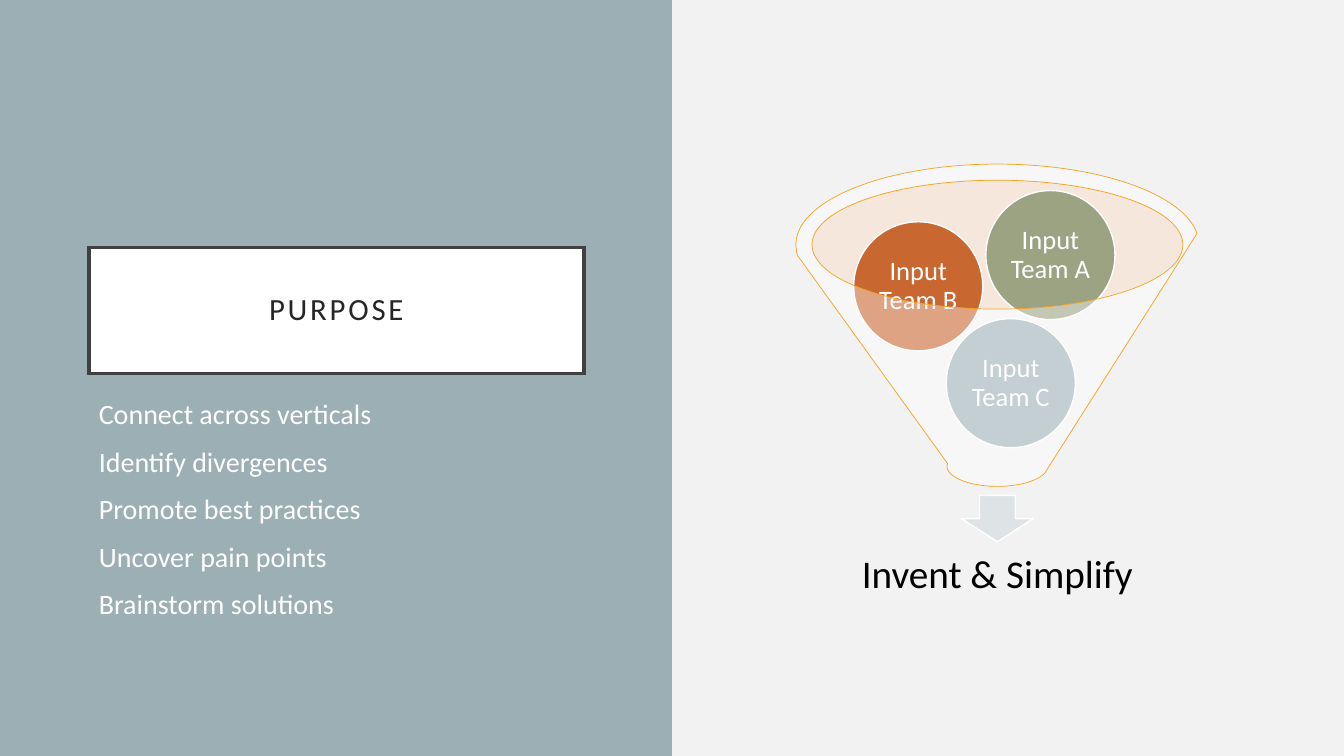
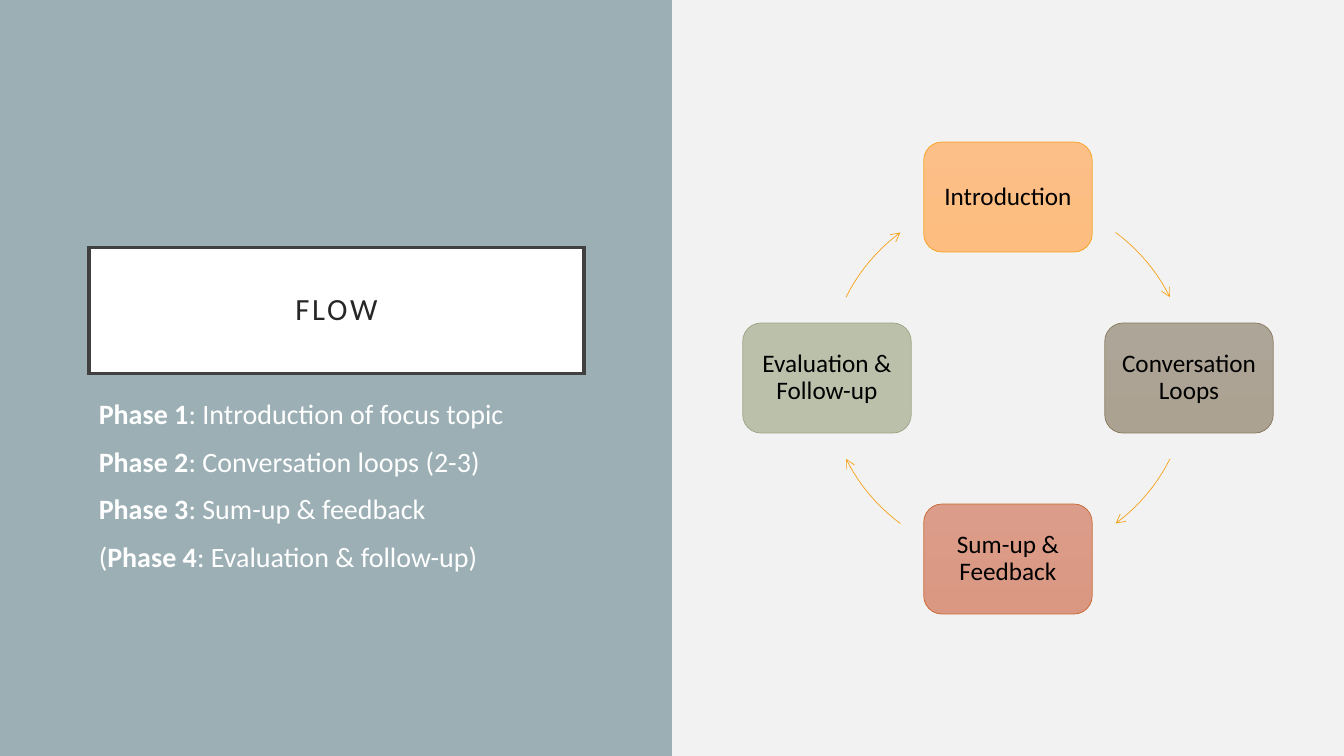
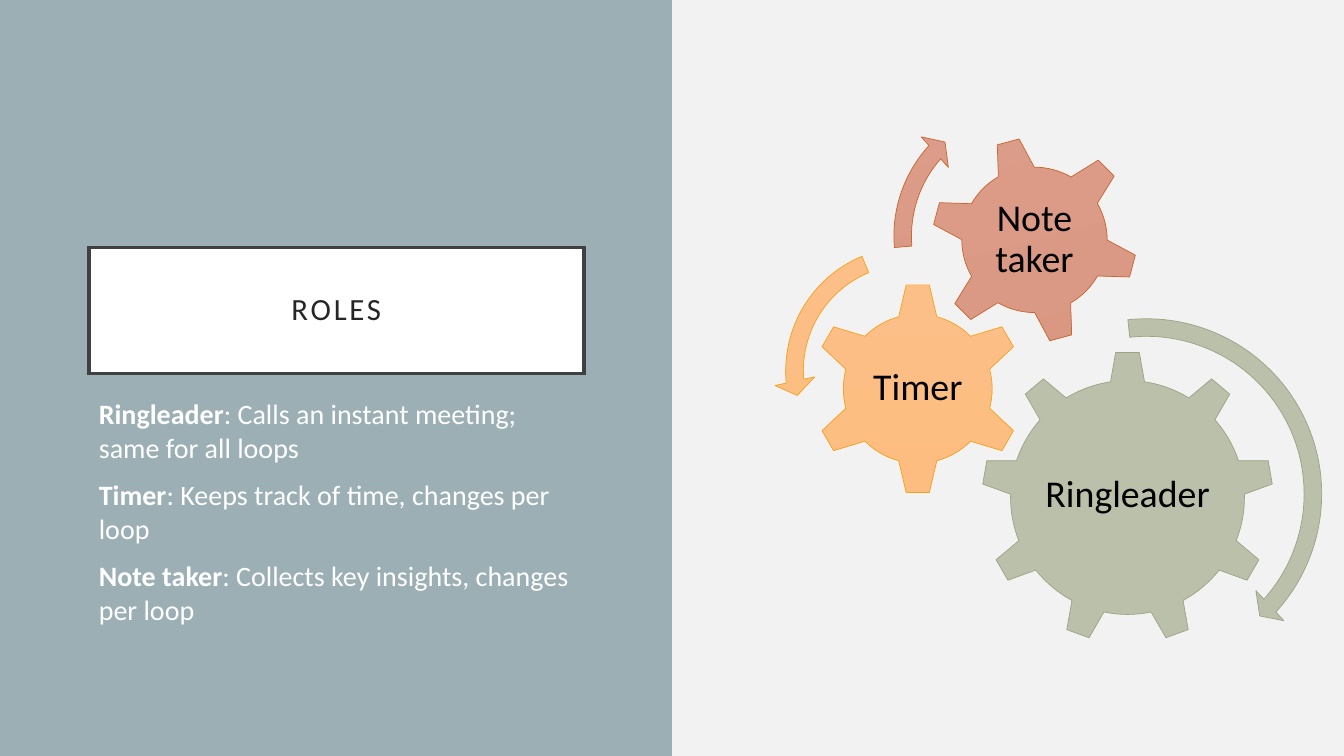
from math import cos, radians, sin

from lxml.etree import SubElement
from pptx import Presentation
from pptx.dml.color import RGBColor
from pptx.enum.shapes import MSO_SHAPE as Kind
from pptx.enum.text import MSO_ANCHOR as Anchor, MSO_AUTO_SIZE as Auto, PP_ALIGN as Align
from pptx.oxml.ns import qn
from pptx.util import Pt

rgb = RGBColor.from_string
FONT = "Calibri"
WHITE, BLACK = "FFFFFF", "000000"
SLATE, GOLD, RUST, SAGE, BROWN = "9BAFB5", "F6A21D", "C96731", "9CA383", "87795D"
# Top and bottom colour of the pale gradient that goes with each edge colour
PALE = {
    GOLD: ("FCBF87", "FDBD80"),
    BROWN: ("ADA597", "ABA292"),
    RUST: ("DB9C89", "DA9882"),
    SAGE: ("BBC0AB", "B9BEA8"),
}


def draw(shapes, kind, spot, fill, edge=None, width=0.5, alpha=None):
    """Add a preset shape; a pair of fill colours makes a vertical gradient."""
    shape = shapes.add_shape(kind, *map(Pt, spot))
    shape.shadow.inherit = False
    if isinstance(fill, tuple):
        shape.fill.gradient()
        shape.fill.gradient_angle = 270
        for stop, tone in zip(shape.fill.gradient_stops, fill):
            stop.color.rgb = rgb(tone)
    else:
        shape.fill.solid()
        shape.fill.fore_color.rgb = rgb(fill)
    if alpha:
        tone = shape.element.spPr.find(qn("a:solidFill"))[0]
        SubElement(tone, qn("a:alpha"), val=str(alpha * 1000))
    if edge:
        shape.line.color.rgb = rgb(edge)
        shape.line.width = Pt(width)
    else:
        shape.line.fill.background()
    return shape


def write(shape, paras, size, ink, pad, align=Align.CENTER, anchor=Anchor.MIDDLE,
          lead=0.9, gap=0):
    """Fill a shape with paragraphs, each a tuple of runs: plain, bold, plain."""
    frame = shape.text_frame
    frame.word_wrap = True
    frame.auto_size = Auto.NONE
    frame.vertical_anchor = anchor
    frame.margin_left = frame.margin_right = Pt(pad)
    frame.margin_top = frame.margin_bottom = Pt(3.6)
    for i, runs in enumerate(paras):
        para = frame.add_paragraph() if i else frame.paragraphs[0]
        para.alignment = align
        para.line_spacing = lead
        para.space_before = Pt(gap)
        for j, text in enumerate(runs):
            if text:
                run = para.add_run()
                run.text = text
                run.font.name = FONT
                run.font.size = Pt(size)
                run.font.bold = j == 1
                run.font.color.rgb = rgb(ink)


deck = Presentation()
deck.slide_width, deck.slide_height = Pt(960), Pt(540)
layout = deck.slide_layouts[5]
layout.background.fill.solid()
layout.background.fill.fore_color.rgb = rgb("F2F2F2")

topics = [
    ("PURPOSE", [
        ("Connect across verticals",),
        ("Identify divergences",),
        ("Promote best practices",),
        ("Uncover pain points",),
        ("Brainstorm solutions",),
    ]),
    ("FLOW", [
        ("", "Phase 1", ": Introduction of focus topic"),
        ("", "Phase 2", ": Conversation loops (2-3)"),
        ("", "Phase 3", ": Sum-up & feedback"),
        ("(", "Phase 4", ": Evaluation & follow-up)"),
    ]),
    ("ROLES", [
        ("", "Ringleader", ": Calls an instant meeting; same for all loops"),
        ("", "Timer", ": Keeps track of time, changes per loop"),
        ("", "Note taker", ": Collects key insights, changes per loop"),
    ]),
]
pages = []
for head, paras in topics:
    slide = deck.slides.add_slide(layout)
    title = slide.shapes.title
    title.left, title.top, title.width, title.height = map(Pt, (63.5, 176.8, 353.5, 90))
    title.fill.solid()
    title.fill.fore_color.rgb = rgb(WHITE)
    title.line.color.rgb = rgb("404040")
    title.line.width = Pt(2.5)
    SubElement(title.line._get_or_add_ln(), qn("a:miter"), lim="800000")
    write(title, [(head,)], 22, "262626", 14.4)
    title.text_frame.paragraphs[0].runs[0].font._element.set("spc", "200")
    body = slide.shapes.add_textbox(*map(Pt, (63.5, 279.7, 353.5, 172.8)))
    write(body, paras, 20, WHITE, 7.2, Align.LEFT, Anchor.TOP, 1, 10)
    pages.append(slide.shapes)
purpose, flow, roles = pages

# The left panel belongs to the layout, behind its placeholders
panel = draw(purpose, Kind.RECTANGLE, (0, 0, 480, 540), SLATE)
layout.shapes.element.insert(2, panel.element)

# Purpose: three inputs fall through a funnel
draw(purpose, Kind.OVAL, (579.6, 128.2, 265, 92.2), "FBD7BD", alpha=40)
draw(purpose, Kind.DOWN_ARROW, (686.9, 353.9, 51.1, 33.1), "DEE3E5", WHITE, 1)
result = purpose.add_textbox(*map(Pt, (589.2, 380.2, 246.2, 61.9)))
write(result, [("Invent & Simplify",)], 28, BLACK, 16)
for team, left, top, tone in [
    ("C", 675.9, 227.6, SLATE),
    ("B", 609.8, 158.4, RUST),
    ("A", 704.2, 136.1, SAGE),
]:
    ball = draw(purpose, Kind.OVAL, (left, top, 92.2, 92.2), tone, WHITE, 1)
    write(ball, [(f"Input Team {team}",)], 19, WHITE, 2.2)
draw(purpose, Kind.FUNNEL, (568.5, 117.2, 288, 230.2), WHITE, GOLD, alpha=40)

# Flow: four steps, a quarter turn apart, joined by arcs of 27 degrees
mid_x, mid_y, ring = 720, 270, 129.3
wide, high = 120.4, 78.6
for i, (step, edge, start) in enumerate([
    ("Introduction", GOLD, -53.5),
    ("Conversation Loops", BROWN, 26.5),
    ("Sum-up & Feedback", RUST, 126.5),
    ("Evaluation & Follow-up", SAGE, 206.5),
]):
    turn = radians(90 * i - 90)
    left = mid_x + ring * cos(turn) - wide / 2
    top = mid_y + ring * sin(turn) - high / 2
    card = draw(flow, Kind.ROUNDED_RECTANGLE, (left, top, wide, high), PALE[edge], edge)
    write(card, [(step,)], 18, BLACK, 5)
    turns = [radians(start + 2.7 * k) for k in range(11)]
    dots = [(Pt(mid_x + ring * cos(t)), Pt(mid_y + ring * sin(t))) for t in turns]
    pen = flow.build_freeform(*dots[0])
    pen.add_line_segments(dots[1:], close=False)
    arc = pen.convert_to_shape()
    # The frame of each arc is the whole ring
    arc.left, arc.top = Pt(mid_x - ring), Pt(mid_y - ring)
    arc.width = arc.height = Pt(2 * ring)
    track = next(arc.element.iter(qn("a:path")))
    track.set("w", str(arc.width))
    track.set("h", str(arc.height))
    for knot, (x, y) in zip(track.iter(qn("a:pt")), dots):
        knot.set("x", str(x - arc.left))
        knot.set("y", str(y - arc.top))
    arc.shadow.inherit = False
    arc.fill.background()
    arc.line.color.rgb = rgb(GOLD)
    arc.line.width = Pt(0.5)
    SubElement(arc.line._get_or_add_ln(), qn("a:tailEnd"), type="arrow")

# Roles: gears with turning arrows; arrow values are band %, three angles, head %
for label, spot, edge, gear, place, tilt, arrow, orbit, bend in [
    ("Ringleader", (743.2, 300.2, 124.6, 107.3), SAGE,
     Kind.GEAR_9, (701, 251, 208.8, 208.8), 0,
     Kind.CIRCULAR_ARROW, (685.4, 219.3, 267.1, 267.1), (4.7, 4.98, 42.15, 263.89, 5.5)),
    ("Timer", (617.8, 239.9, 75.6, 74.9), GOLD,
     Kind.GEAR_6, (579.6, 201.7, 151.9, 151.9), 0,
     Kind.LEFT_CIRCULAR_ARROW, (553, 168, 193.7, 193.7), (6.5, 7.17, 174.82, 247.3, 7.5)),
    ("Note taker", (697.2, 129.6, 83.5, 83.5), RUST,
     Kind.GEAR_6, (664.8, 97.2, 148.3, 148.3), 345,
     Kind.CIRCULAR_ARROW, (630.2, 64.3, 208.8, 208.8), (6, 6.57, 221.9, 175.14, 7)),
]:
    wheel = draw(roles, gear, place, PALE[edge], edge)
    wheel.rotation = tilt
    name = roles.add_textbox(*map(Pt, spot))
    write(name, [(label,)], 27, BLACK, 2.9)
    sweep = draw(roles, arrow, orbit, PALE[edge], edge)
    for i, value in enumerate(bend):
        sweep.adjustments[i] = value * (0.01 if i in (0, 4) else 0.6)

deck.save("out.pptx")
